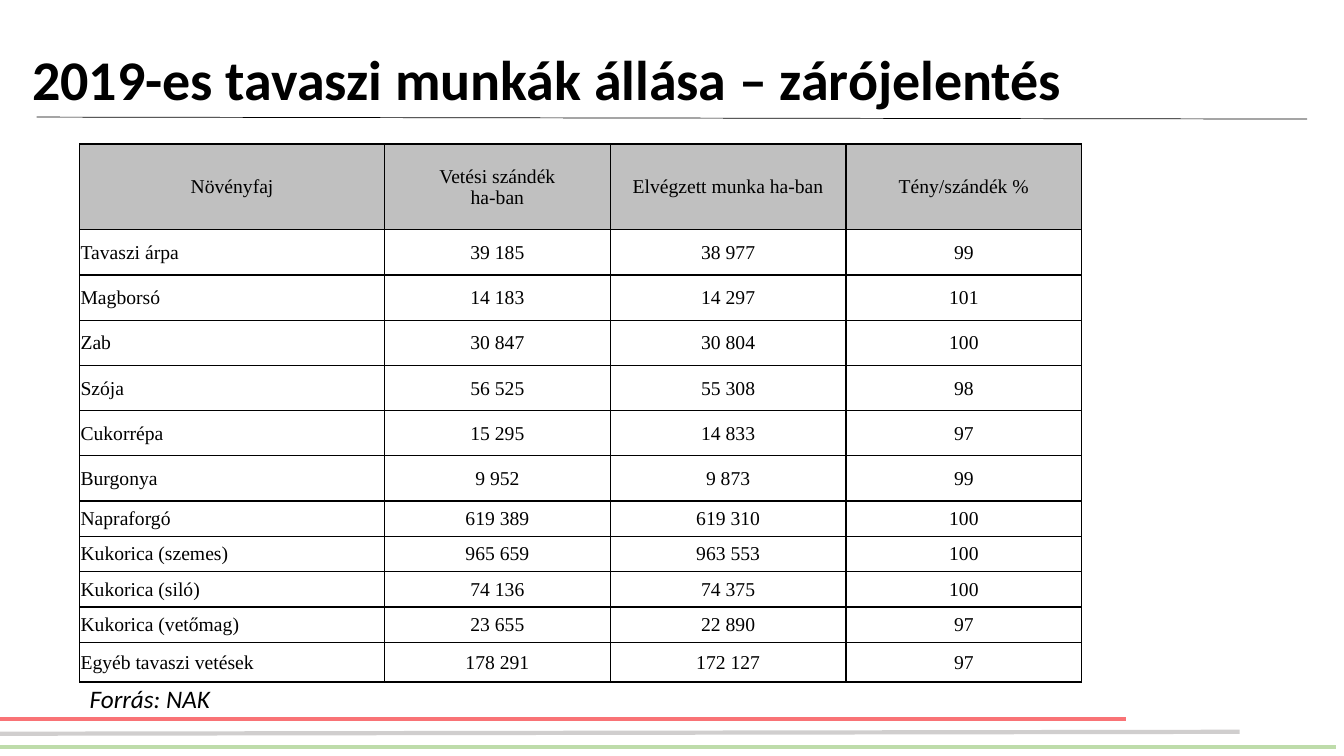
from dataclasses import dataclass

from lxml.etree import SubElement
from pptx import Presentation
from pptx.dml.color import RGBColor
from pptx.enum.dml import MSO_THEME_COLOR
from pptx.enum.shapes import MSO_CONNECTOR
from pptx.enum.text import MSO_ANCHOR, MSO_AUTO_SIZE, PP_ALIGN
from pptx.oxml.ns import qn
from pptx.slide import Slide
from pptx.table import _Cell
from pptx.text.text import _Paragraph
from pptx.util import Cm, Pt

BLACK = RGBColor(0x00, 0x00, 0x00)
RED = RGBColor(0xF9, 0x73, 0x76)
GREEN = RGBColor(0xBE, 0xDC, 0xAA)
SILVER = RGBColor(0xD0, 0xCE, 0xCE)
HEADER_GREY = RGBColor(0xC0, 0xC0, 0xC0)
BODY_FONT = "Calibri"
TABLE_FONT = "Times New Roman"


@dataclass(frozen=True)
class Rule:
    """A straight line, with ends in centimetres and width in points."""
    start: tuple[float, float]
    end: tuple[float, float]
    color: RGBColor
    width: float


@dataclass(frozen=True)
class Crop:
    name: str
    planned: str
    done: str
    percent: str
    height: float


RULES = [
    Rule((0, 18.11), (28.37, 18.11), RED, 3),
    Rule((0, 18.82), (33.68, 18.82), GREEN, 3),
    Rule((0, 18.49), (31.24, 18.44), SILVER, 3),
    Rule((0.92, 2.95), (32.94, 3.0), BLACK, 0.5),
]
HEADERS = ["Növényfaj", "Vetési szándék\nha-ban", "Elvégzett munka ha-ban", "Tény/szándék %"]
HEADER_HEIGHT = 2.16
COLUMN_WIDTHS = [7.68, 5.69, 5.94, 5.94]
TALL, SHORT, LAST = 1.14, 0.89, 1.0
CROPS = [
    Crop("Tavaszi árpa", "39 185", "38 977", "99", TALL),
    Crop("Magborsó", "14 183", "14 297", "101", TALL),
    Crop("Zab", "30 847", "30 804", "100", TALL),
    Crop("Szója", "56 525", "55 308", "98", TALL),
    Crop("Cukorrépa", "15 295", "14 833", "97", TALL),
    Crop("Burgonya", "9 952", "9 873", "99", TALL),
    Crop("Napraforgó", "619 389", "619 310", "100", SHORT),
    Crop("Kukorica (szemes)", "965 659", "963 553", "100", SHORT),
    Crop("Kukorica (siló)", "74 136", "74 375", "100", SHORT),
    Crop("Kukorica (vetőmag)", "23 655", "22 890", "97", SHORT),
    Crop("Egyéb tavaszi vetések", "178 291", "172 127", "97", LAST),
]


def add_span(para: _Paragraph, text: str, font: str, size: float,
             bold: bool = False, italic: bool = False) -> None:
    span = para.add_run()
    span.text = text
    span.font.name = font
    span.font.size = Pt(size)
    span.font.bold = bold
    span.font.italic = italic
    span.font.color.rgb = BLACK


def add_rule(page: Slide, rule: Rule) -> None:
    ends = [Cm(value) for value in (*rule.start, *rule.end)]
    line = page.shapes.add_connector(MSO_CONNECTOR.STRAIGHT, *ends)
    line.line.color.rgb = rule.color
    line.line.width = Pt(rule.width)
    SubElement(line._element.spPr, qn("a:effectLst"))


def fill_title(page: Slide) -> None:
    title = page.shapes.title
    title.left, title.top, title.width, title.height = Cm(0.56), Cm(0.23), Cm(29.21), Cm(3.68)
    frame = title.text_frame
    frame.word_wrap = True
    frame.auto_size = MSO_AUTO_SIZE.NONE
    frame.vertical_anchor = MSO_ANCHOR.MIDDLE
    para = frame.paragraphs[0]
    para.alignment = PP_ALIGN.LEFT
    para.line_spacing = 0.9
    add_span(para, "2019-es tavaszi munkák állása – zárójelentés", BODY_FONT, 40, bold=True)


def add_source_note(page: Slide) -> None:
    box = page.shapes.add_textbox(Cm(2.01), Cm(17.09), Cm(3.58), Cm(1.02))
    frame = box.text_frame
    frame.word_wrap = False
    frame.auto_size = MSO_AUTO_SIZE.SHAPE_TO_FIT_TEXT
    add_span(frame.paragraphs[0], "Forrás: NAK", BODY_FONT, 18, italic=True)


def add_borders(cell: _Cell) -> None:
    """Put a thin black line on all four sides, ahead of the cell fill."""
    properties = cell._tc.get_or_add_tcPr()
    for position, side in enumerate(("a:lnL", "a:lnR", "a:lnT", "a:lnB")):
        border = SubElement(properties, qn(side), w=str(Pt(1)))
        fill = SubElement(border, qn("a:solidFill"))
        SubElement(fill, qn("a:srgbClr"), val=str(BLACK))
        properties.insert(position, border)


def write_cell(cell: _Cell, text: str, align: PP_ALIGN, is_header: bool) -> None:
    cell.margin_left = cell.margin_right = cell.margin_top = Cm(0.02)
    cell.margin_bottom = Cm(0)
    cell.vertical_anchor = MSO_ANCHOR.MIDDLE
    if is_header:
        cell.fill.solid()
        cell.fill.fore_color.rgb = HEADER_GREY
    else:
        cell.fill.background()
    add_borders(cell)
    para = cell.text_frame.paragraphs[0]
    para.alignment = align
    for index, part in enumerate(text.split("\n")):
        if index:
            para.add_line_break()
        add_span(para, part, TABLE_FONT, 14)


def add_crop_table(page: Slide) -> None:
    heights = [HEADER_HEIGHT] + [crop.height for crop in CROPS]
    rows = [HEADERS] + [[crop.name, crop.planned, crop.done, crop.percent] for crop in CROPS]
    frame = page.shapes.add_table(len(rows), len(HEADERS), Cm(2.01), Cm(3.63),
                                  Cm(sum(COLUMN_WIDTHS)), Cm(sum(heights)))
    table = frame.table
    table.horz_banding = False
    table.first_row = False
    for column, width in zip(table.columns, COLUMN_WIDTHS):
        column.width = Cm(width)
    for row_index, (height, texts) in enumerate(zip(heights, rows)):
        table.rows[row_index].height = Cm(height)
        for column_index, text in enumerate(texts):
            is_header = row_index == 0
            is_name = column_index == 0 and not is_header
            align = PP_ALIGN.JUSTIFY if is_name else PP_ALIGN.CENTER
            if is_name and row_index == len(CROPS):
                align = PP_ALIGN.LEFT
            write_cell(table.cell(row_index, column_index), text, align, is_header)


def main() -> None:
    deck = Presentation()
    deck.slide_width, deck.slide_height = Cm(33.87), Cm(19.05)
    page = deck.slides.add_slide(deck.slide_layouts.get_by_name("Title Only"))
    page.background.fill.solid()
    page.background.fill.fore_color.theme_color = MSO_THEME_COLOR.BACKGROUND_1
    fill_title(page)
    for rule in RULES:
        add_rule(page, rule)
    add_source_note(page)
    add_crop_table(page)
    deck.save("out.pptx")


if __name__ == "__main__":
    main()
